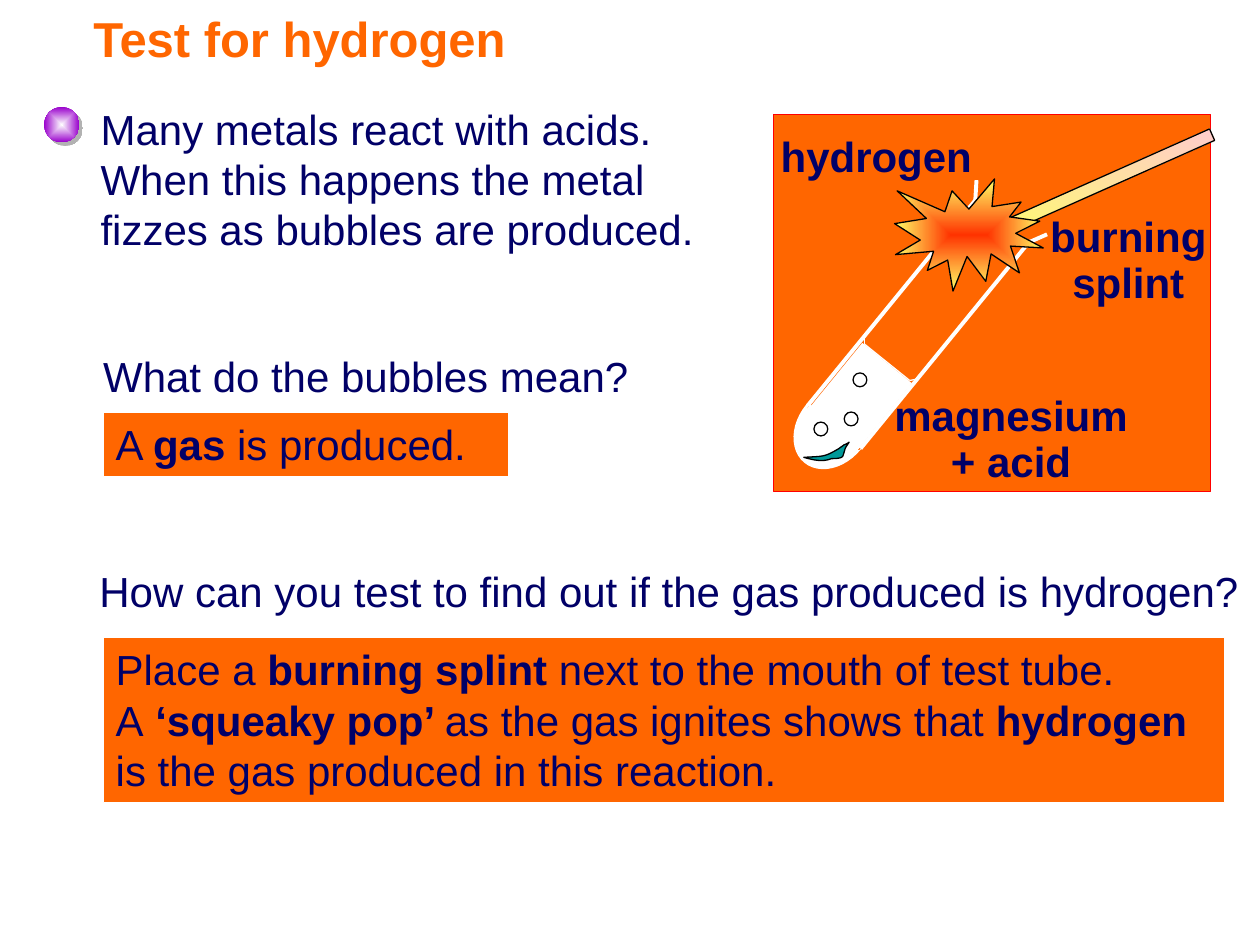
import pptx
import pptx.util
import pptx.dml.color
import pptx.enum.shapes
import pptx.enum.text
import pptx.oxml
import pptx.oxml.ns

RGBColor = pptx.dml.color.RGBColor
Pt = pptx.util.Pt
SHAPE = pptx.enum.shapes.MSO_SHAPE
ALIGN = pptx.enum.text.PP_ALIGN

ORANGE = RGBColor(0xFF, 0x66, 0x00)
RED = RGBColor(0xFF, 0x00, 0x00)
FLAME = RGBColor(0xFF, 0x33, 0x00)
YELLOW = RGBColor(0xFF, 0xFF, 0x66)
PINK = RGBColor(0xFF, 0xCC, 0xCC)
PURPLE = RGBColor(0x99, 0x00, 0xCC)
TEAL = RGBColor(0x00, 0x99, 0x99)
NAVY = RGBColor(0x01, 0x00, 0x67)
WHITE = RGBColor(0xFF, 0xFF, 0xFF)
BLACK = RGBColor(0x00, 0x00, 0x00)

COLUMNS, ROWS = 100, 75
UNIT = pptx.util.Inches(10) // COLUMNS
BODY = {"name": "Arial", "size": Pt(24), "bold": False}
TITLE = {"name": "Arial", "size": Pt(28), "bold": True}
TUBE_TILT = 39.2


def grid(*values):
    """Turn grid columns or rows into slide lengths."""
    return [round(value * UNIT) for value in values]


def within(box, place):
    """Move a place given from the corner of a box onto the slide grid."""
    return (box[0] + place[0], box[1] + place[1], *place[2:])


def effects(shape, content=""):
    namespace = pptx.oxml.ns.nsdecls("a")
    shape._element.spPr.append(
        pptx.oxml.parse_xml(f"<a:effectLst {namespace}>{content}</a:effectLst>"))


def set_line(shape, color, width):
    if color is None:
        shape.line.fill.background()
    else:
        shape.line.color.rgb = color
        shape.line.width = Pt(width)


def add_shape(page, kind, place, fill=None, line=None, width=0.75, tilt=0):
    shape = page.shapes.add_shape(kind, *grid(*place))
    shape.shadow.inherit = False
    shape.rotation = tilt
    if fill is None:
        shape.fill.background()
    else:
        shape.fill.solid()
        shape.fill.fore_color.rgb = fill
    set_line(shape, line, width)
    return shape


def set_gradient(shape, first, last, angle=None):
    """Blend two colours along an angle, or outwards from the centre."""
    shape.fill.gradient()
    for stop, color in zip(shape.fill.gradient_stops, (first, last)):
        stop.color.rgb = color
    if angle is not None:
        shape.fill.gradient_angle = angle
        return
    linear = shape._element.spPr.find(".//" + pptx.oxml.ns.qn("a:lin"))
    centred = pptx.oxml.parse_xml(
        f'<a:path {pptx.oxml.ns.nsdecls("a")} path="rect">'
        '<a:fillToRect l="50000" t="50000" r="50000" b="50000"/></a:path>')
    linear.getparent().replace(linear, centred)


def add_line(page, box, start, end, width):
    line = page.shapes.add_connector(
        pptx.enum.shapes.MSO_CONNECTOR.STRAIGHT,
        *grid(*within(box, start), *within(box, end)))
    set_line(line, WHITE, width)
    effects(line)


def write(shape, paragraphs, align=ALIGN.LEFT, spacing=None):
    """Fill a shape with paragraphs of plain and *bold* spans."""
    frame = shape.text_frame
    frame.word_wrap = True
    frame.vertical_anchor = pptx.enum.text.MSO_ANCHOR.TOP
    for index, text in enumerate(paragraphs):
        para = frame.add_paragraph() if index else frame.paragraphs[0]
        para.alignment = align
        para.line_spacing = spacing
        for part, words in enumerate(text.split("*")):
            if words:
                span = para.add_run()
                span.text = words
                for key, value in {**BODY, "bold": part % 2 == 1}.items():
                    setattr(span.font, key, value)
                span.font.color.rgb = NAVY


def add_text(page, place, text, **layout):
    write(page.shapes.add_textbox(*grid(*place)), [text], **layout)


def add_answer(page, place, *paragraphs):
    write(add_shape(page, SHAPE.RECTANGLE, place, ORANGE, WHITE), paragraphs)


def add_title(page, place, text):
    title = page.shapes.title
    title.left, title.top, title.width, title.height = grid(*place)
    frame = title.text_frame
    frame.text = text
    frame.margin_left = grid(7.4)[0]
    frame.vertical_anchor = pptx.enum.text.MSO_ANCHOR.MIDDLE
    para = frame.paragraphs[0]
    para.alignment = ALIGN.LEFT
    for key, value in TITLE.items():
        setattr(para.font, key, value)
    para.font.color.rgb = ORANGE


def add_bullet_ball(page, place):
    ball = add_shape(page, SHAPE.OVAL, place, PURPLE)
    set_gradient(ball, WHITE, PURPLE)
    ball._element.spPr.remove(ball._element.spPr.find(pptx.oxml.ns.qn("a:effectLst")))
    effects(ball, '<a:outerShdw dist="35921" dir="2700000" algn="ctr" rotWithShape="0">'
                  '<a:srgbClr val="B2B2B2"/></a:outerShdw>')


def curve_points(start, curves, steps=8):
    """Trace cubic curves as closely spaced points."""
    points = []
    for first, second, end in curves:
        for step in range(1, steps + 1):
            t = step / steps
            weights = ((1 - t) ** 3, 3 * t * (1 - t) ** 2, 3 * t * t * (1 - t), t ** 3)
            points.append(tuple(
                sum(weight * point[axis] for weight, point
                    in zip(weights, (start, first, second, end)))
                for axis in (0, 1)))
        start = end
    return points


def add_magnesium(page, box):
    start = (2.4, 27.2)
    curves = [((4, 27.1), (4, 27.2), (5.2, 26.5)),
              ((5.3, 26.4), (5.5, 26.3), (5.6, 26.2)),
              ((5.7, 26.2), (6, 26), (6, 26)),
              ((5.6, 26.6), (5.8, 26.2), (5.5, 27.1)),
              ((5.4, 27.3), (4.9, 27.3), (4.6, 27.3)),
              ((3.9, 27.6), (3.1, 27.4), start)]
    builder = page.shapes.build_freeform(*grid(*within(box, start)))
    builder.add_line_segments([grid(*within(box, point))
                               for point in curve_points(start, curves)])
    strip = builder.convert_to_shape()
    strip.shadow.inherit = False
    strip.fill.solid()
    strip.fill.fore_color.rgb = TEAL
    set_line(strip, BLACK, 0.75)


def add_test_tube(page, box):
    for start, end in [((20.1, 10.2), (21.7, 9.5)), ((16, 6.9), (16.1, 5.2))]:
        add_line(page, box, start, end, 2.25)
    for kind, place, line, width in [
            (SHAPE.OVAL, (2.1, 21.3, 5.3, 7), WHITE, 2.25),
            (SHAPE.RECTANGLE, (4.3, 18.9, 5.2, 6.8), ORANGE, 0.75),
            (SHAPE.RECTANGLE, (2.1, 24.6, 5.1, 0.8), WHITE, 0.75)]:
        add_shape(page, kind, within(box, place), WHITE, line, width, TUBE_TILT)
    surface = [(7.2, 17.6), (7.2, 18.2), (10.8, 21.1), (11.3, 21)]
    for start, end in zip(surface, surface[1:]):
        add_line(page, box, start, end, 0.75)
    for start, end in [((20.2, 10.2), (6.9, 26.5)), ((16, 6.8), (2.7, 23.1))]:
        add_line(page, box, start, end, 2.25)


def add_experiment(page, box):
    add_shape(page, SHAPE.RECTANGLE, box, ORANGE, RED)
    add_test_tube(page, box)
    add_magnesium(page, box)
    for corner in [(3.2, 24.4), (5.6, 23.6), (6.3, 20.5)]:
        add_shape(page, SHAPE.OVAL, within(box, (*corner, 1.1, 1.1)), line=BLACK)
    splint = add_shape(page, SHAPE.RECTANGLE, within(box, (15, 5.3, 20.7, 1)),
                       YELLOW, BLACK, tilt=336)
    set_gradient(splint, YELLOW, PINK, angle=45)
    for place, label, spacing in [
            ((8.2, 21.8, 21.3, 8.2), "*magnesium + acid*", 0.9),
            ((-0.9, 0.8, 18.1, 5), "*hydrogen*", None),
            ((19.7, 7.6, 16.9, 8.2), "*burning splint*", 0.9)]:
        add_text(page, within(box, place), label, align=ALIGN.CENTER, spacing=spacing)
    blast = add_shape(page, SHAPE.EXPLOSION1, within(box, (9.6, 5.1, 11.8, 8.9)),
                      FLAME, BLACK)
    set_gradient(blast, FLAME, YELLOW)


def main():
    deck = pptx.Presentation()
    deck.slide_width, deck.slide_height = grid(COLUMNS, ROWS)
    page = deck.slides.add_slide(deck.slide_layouts.get_by_name("Title Only"))
    add_title(page, (0, 0, 71.3, 6), "Test for hydrogen")
    add_bullet_ball(page, (3.5, 8.5, 2.8, 2.8))
    add_experiment(page, (61.4, 9.1, 34.7, 29.9))
    add_text(page, (7, 7.7, 50.4, 13), "Many metals react with acids. When this "
             "happens the metal fizzes as bubbles are produced.")
    add_text(page, (7.2, 27.3, 47.2, 5), "What do the bubbles mean?")
    add_answer(page, (8.2, 32.7, 32.2, 5.1), "A *gas* is produced.")
    add_text(page, (6.9, 44.4, 93.1, 5),
             "How can you test to find out if the gas produced is hydrogen?")
    add_answer(page, (8.2, 50.6, 89, 13.1),
               "Place a *burning splint* next to the mouth of test tube.",
               "A* ‘squeaky pop’ *as the gas ignites shows that *hydrogen*"
               " is the gas produced in this reaction.")
    deck.save("out.pptx")


if __name__ == "__main__":
    main()
